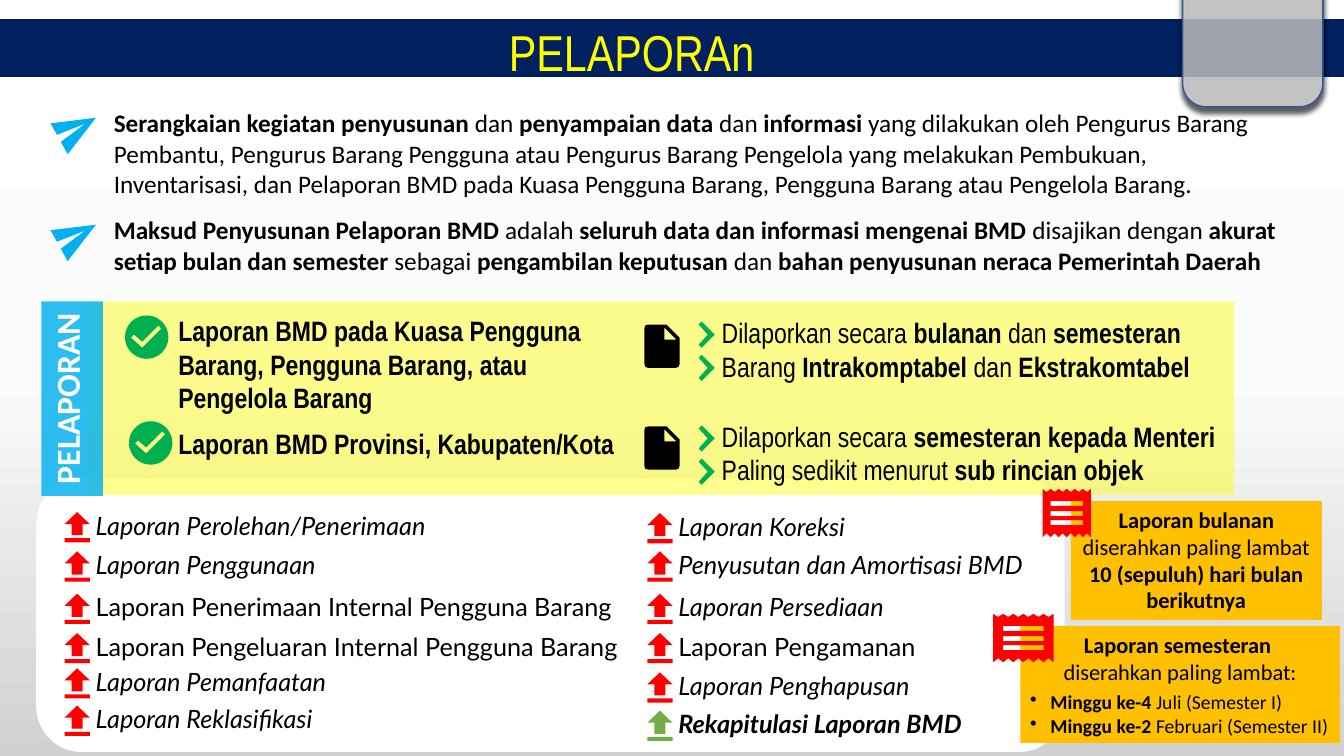
from copy import deepcopy
from dataclasses import dataclass
from math import cos, pi, sin

from lxml.etree import SubElement
from pptx import Presentation
from pptx.dml.color import RGBColor
from pptx.enum.shapes import MSO_SHAPE
from pptx.enum.text import MSO_ANCHOR, MSO_AUTO_SIZE, PP_ALIGN
from pptx.oxml.ns import qn
from pptx.util import Pt

PX = 9144
FINE = 100


@dataclass(frozen=True)
class Theme:
    black: str = "000000"
    white: str = "FFFFFF"
    navy: str = "002060"
    outline: str = "325491"
    yellow: str = "FFFF00"
    sky: str = "00B0F0"
    green: str = "00B050"
    leaf: str = "70AD47"
    red: str = "FF0000"
    amber: str = "FFC000"
    backdrop: tuple = ((0, "FFFFFF"), (50, "FBFBFB"), (100, "D1D1D1"))
    body: str = "Calibri"
    narrow: str = "Arial Narrow"
    list_font: str = "Lato"
    title_size: int = 36
    tab_size: int = 24
    panel_size: int = 20
    text_size: int = 18
    note_size: int = 16
    bullet_size: int = 14


class SlideBuilder:
    """Draws styled elements on the current page, with lengths in px; ** switches bold."""

    def __init__(self, page, theme):
        self.page, self.theme = page, theme

    def background(self, stops):
        fill = self.page.background.fill
        fill.gradient()
        fill.gradient_angle = 270
        stop_list = self.page.element.find(".//" + qn("a:gsLst"))
        stop_list.insert(1, deepcopy(stop_list[0]))
        for stop, (position, color) in zip(fill.gradient_stops, stops):
            stop.position = position / 100
            stop.color.rgb = RGBColor.from_string(color)

    def paint(self, shape, color, alpha=100, line=None):
        shape.shadow.inherit = False
        shape.fill.solid()
        shape.fill.fore_color.rgb = RGBColor.from_string(color)
        if alpha < 100:
            tone = shape.element.spPr.find(".//" + qn("a:srgbClr"))
            SubElement(tone, qn("a:alpha"), val=str(alpha * 1000))
        if line:
            shape.line.color.rgb = RGBColor.from_string(line)
            shape.line.width = Pt(1)
        else:
            shape.line.fill.background()
        return shape

    def block(self, bounds, color, kind=MSO_SHAPE.RECTANGLE, **look):
        left, top, width, height = (value * PX for value in bounds)
        shape = self.page.shapes.add_shape(kind, left, top, width, height)
        return self.paint(shape, color, **look)

    def drop_shadow(self, shape):
        effects = shape.element.spPr.find(qn("a:effectLst"))
        shadow = SubElement(effects, qn("a:outerShdw"), blurRad=str(Pt(4)), dist=str(Pt(4)),
                            dir="5400000", algn="t", rotWithShape="0")
        SubElement(shadow, qn("a:srgbClr"), val=self.theme.black)

    def text_box(self, bounds, lines, size, **style):
        box = self.page.shapes.add_textbox(*(value * PX for value in bounds))
        self.fill_text(box, lines, size, **style)

    def fill_text(self, box, lines, size, face=None, color=None, align=PP_ALIGN.LEFT,
                  bold=False, italic=False, bullet=None):
        frame = box.text_frame
        frame_format = {"word_wrap": True, "auto_size": MSO_AUTO_SIZE.SHAPE_TO_FIT_TEXT,
                        "vertical_anchor": MSO_ANCHOR.TOP}
        for name, value in frame_format.items():
            setattr(frame, name, value)
        for index, line in enumerate(lines):
            para = frame.add_paragraph() if index else frame.paragraphs[0]
            para.alignment = align
            if bullet:
                properties = para._p.get_or_add_pPr()
                properties.set("marL", str(20 * PX))
                properties.set("indent", str(-20 * PX))
                SubElement(properties, qn("a:buChar"), char=bullet)
            for order, part in enumerate(line.split("**")):
                for row, words in enumerate(part.split("\n")):
                    if row:
                        para.add_line_break()
                    if not words:
                        continue
                    span = para.add_run()
                    span.text = words
                    span_format = {"name": face or self.theme.body, "size": Pt(size),
                                   "bold": bold or order % 2 == 1, "italic": italic}
                    for name, value in span_format.items():
                        setattr(span.font, name, value)
                    span.font.color.rgb = RGBColor.from_string(color or self.theme.black)

    def icon(self, left, top, contours, color, rotation=0):
        builder = None
        for contour in contours:
            points = [((left + x) * FINE, (top + y) * FINE) for x, y in contour]
            if builder is None:
                builder = self.page.shapes.build_freeform(*points[0], scale=PX / FINE)
            else:
                builder.move_to(*points[0])
            builder.add_line_segments(points[1:], close=True)
        shape = self.paint(builder.convert_to_shape(), color)
        shape.rotation = rotation


def bar(left, top, right, bottom):
    return [(left, top), (right, top), (right, bottom), (left, bottom)]


def receipt(step):
    top_edge = [(n * step, 3 * (n % 2)) for n in range(13)]
    bottom_edge = [(n * step, 48 - 4 * (n % 2)) for n in reversed(range(13))]
    rows = [bar(2 * step, top, 10 * step, top + 5) for top in (12, 22, 31)]
    return [top_edge + bottom_edge, *rows]


PLANE = [[(0, 35), (42, 17), (0, 0), (0, 13), (30, 17), (0, 21)]]
DISC = [(21.5 + 21.5 * cos(n * pi / 30), 21.5 + 21.5 * sin(n * pi / 30)) for n in range(60)]
CHECK = [DISC, [(17, 32), (6, 22), (9, 19), (17, 26), (33, 10), (36, 13)]]
UPLOAD = [[(7, 23), (18, 23), (18, 12), (25, 12), (12.5, 0), (0, 12), (7, 12)],
          bar(0, 26, 25, 30)]
CHEVRON = [[(3, 0), (0, 3), (9, 13), (0, 23), (3, 26), (16, 13)]]
DOCUMENT = [[(4, 0), (1, 1), (0, 4), (0, 39), (1, 42), (4, 43), (31, 43), (34, 42),
             (35, 39), (35, 13), (22, 0)], [(20, 15), (20, 3), (32, 15)]]

DEFINITIONS = [
    (102, 101, "**Serangkaian kegiatan penyusunan** dan **penyampaian data** dan **informasi** yang "
     "dilakukan oleh Pengurus Barang Pembantu, Pengurus Barang Pengguna atau Pengurus Barang "
     "Pengelola yang melakukan Pembukuan, Inventarisasi, dan Pelaporan BMD pada Kuasa Pengguna "
     "Barang, Pengguna Barang atau Pengelola Barang."),
    (208, 71, "**Maksud Penyusunan Pelaporan BMD **adalah **seluruh data dan informasi mengenai BMD "
     "**disajikan dengan **akurat setiap bulan dan semester **sebagai **pengambilan keputusan "
     "**dan **bahan penyusunan neraca Pemerintah Daerah**"),
]
LEVELS = [
    ((124, 313), (167, 306, 429, 111),
     "Laporan BMD pada Kuasa Pengguna Barang, Pengguna Barang, atau Pengelola Barang"),
    ((128, 418), (167, 418, 457, 44), "Laporan BMD Provinsi, Kabupaten/Kota"),
]
SCHEDULES = [
    (308, 322, 319, ["Dilaporkan secara **bulanan** dan **semesteran**",
                     "Barang **Intrakomptabel** dan **Ekstrakomtabel**"]),
    (411, 423, 422, ["Dilaporkan secara **semesteran kepada Menteri**",
                     "Paling sedikit menurut **sub rincian objek**"]),
]
REPORTS = [
    (85, 552, [(501, "Laporan Perolehan/Penerimaan", True),
               (540, "Laporan Penggunaan", True),
               (582, "Laporan Penerimaan Internal Pengguna Barang", False),
               (621, "Laporan Pengeluaran Internal Pengguna Barang", False),
               (656, "Laporan Pemanfaatan", True),
               (693, "Laporan Reklasifikasi", True)]),
    (663, 393, [(502, "Laporan Koreksi", True),
                (540, "Penyusutan dan Amortisasi BMD", True),
                (582, "Laporan Persediaan", True),
                (621, "Laporan Pengamanan", False),
                (660, "Laporan Penghapusan", True),
                (698, "**Rekapitulasi Laporan BMD**", True)]),
]


def main():
    theme = Theme()
    deck = Presentation()
    deck.slide_width, deck.slide_height = 1333 * PX, 750 * PX
    slide = SlideBuilder(deck.slides.add_slide(deck.slide_layouts[6]), theme)
    slide.background(theme.backdrop)
    slide.block((36, 474, 1020, 272), theme.white, MSO_SHAPE.ROUNDED_RECTANGLE)
    slide.block((87, 299, 1137, 192), theme.yellow, alpha=44)
    slide.block((-9, 20, 1365, 56), theme.navy, line=theme.navy)
    badge = slide.block((1173, -142, 139, 248), theme.white, MSO_SHAPE.ROUNDED_RECTANGLE,
                        alpha=62, line=theme.outline)
    slide.drop_shadow(badge)
    slide.text_box((172, 16, 909, 71), ["PELAPORAn"], theme.title_size, face=theme.narrow,
                   color=theme.yellow, align=PP_ALIGN.CENTER)

    for top, height, words in DEFINITIONS:
        slide.icon(56, top + 8, PLANE, theme.sky, rotation=331)
        slide.text_box((103, top, 1178, height), [words], theme.text_size)

    for corner, bounds, words in LEVELS:
        slide.icon(*corner, CHECK, theme.green)
        slide.text_box(bounds, [words], theme.panel_size, face=theme.narrow, bold=True)

    tab = slide.block((41, 299, 61, 193), theme.sky, alpha=82)
    tab.text_frame._txBody.bodyPr.set("vert", "vert270")
    slide.fill_text(tab, ["PELAPORAN"], theme.tab_size, color=theme.white,
                    align=PP_ALIGN.CENTER, bold=True)

    for left, width, rows in REPORTS:
        for top, words, italic in rows:
            slide.text_box((left, top, width, 40), [words], theme.text_size,
                           face=theme.list_font, italic=italic)
            slide.icon(left - 21, top + 7, UPLOAD, theme.leaf if "**" in words else theme.red)

    for top, document_top, chevron_top, lines in SCHEDULES:
        slide.text_box((706, top, 535, 77), lines, theme.panel_size, face=theme.narrow)
        slide.icon(639, document_top, DOCUMENT, theme.black)
        for row in range(len(lines)):
            slide.icon(693, chevron_top + 33 * row, CHEVRON, theme.green)

    monthly = slide.block((1062, 497, 249, 118), theme.amber)
    slide.fill_text(monthly, ["**Laporan bulanan **diserahkan paling lambat "
                              "**10 (sepuluh) hari bulan berikutnya**"],
                    theme.note_size, align=PP_ALIGN.CENTER)
    slide.icon(1034, 485, receipt(4), theme.red)
    semester = slide.block((1012, 621, 317, 64), theme.amber)
    slide.fill_text(semester, ["**Laporan semesteran \n**diserahkan paling lambat:"],
                    theme.note_size, align=PP_ALIGN.CENTER)
    slide.icon(985, 609, receipt(5), theme.red)
    deadlines = slide.block((1012, 680, 317, 57), theme.amber)
    slide.fill_text(deadlines, ["**Minggu ke-4 **Juli (Semester I)",
                                "**Minggu ke-2 **Februari (Semester II)"],
                    theme.bullet_size, bullet="•")
    deck.save("out.pptx")


if __name__ == "__main__":
    main()
